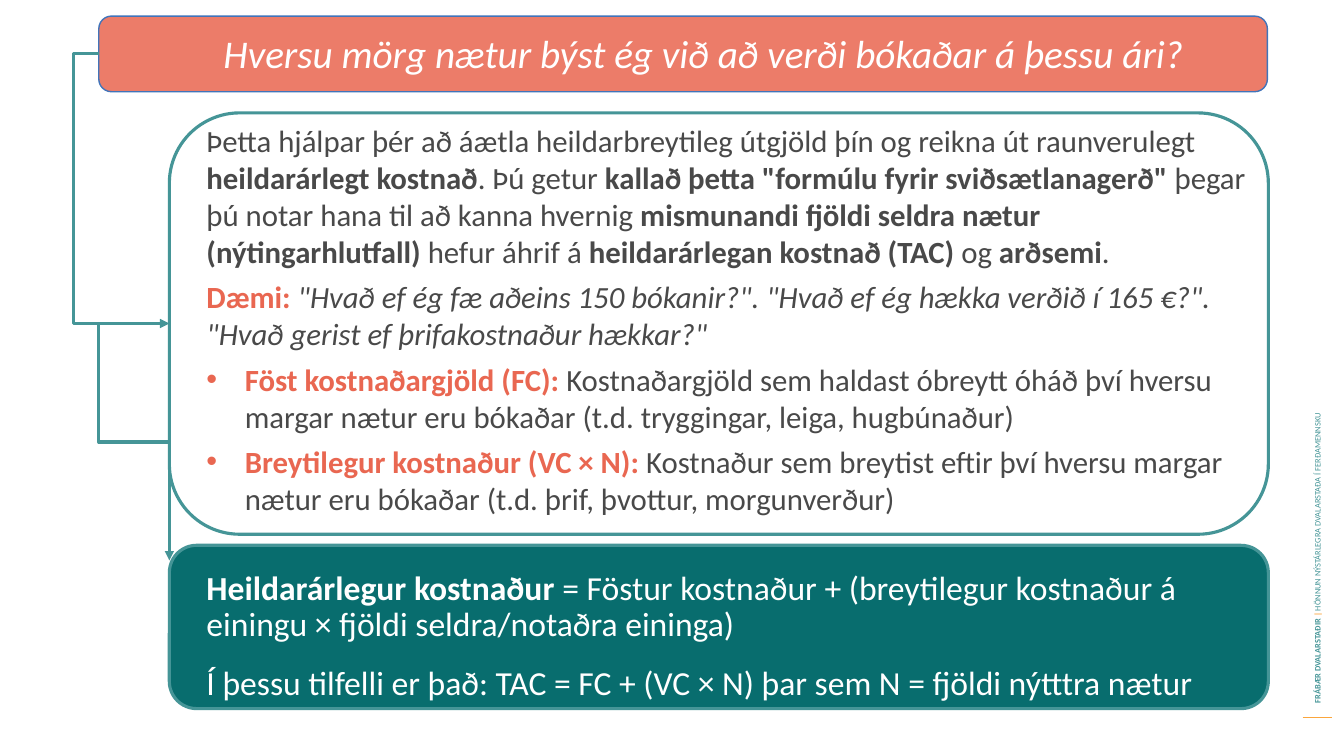
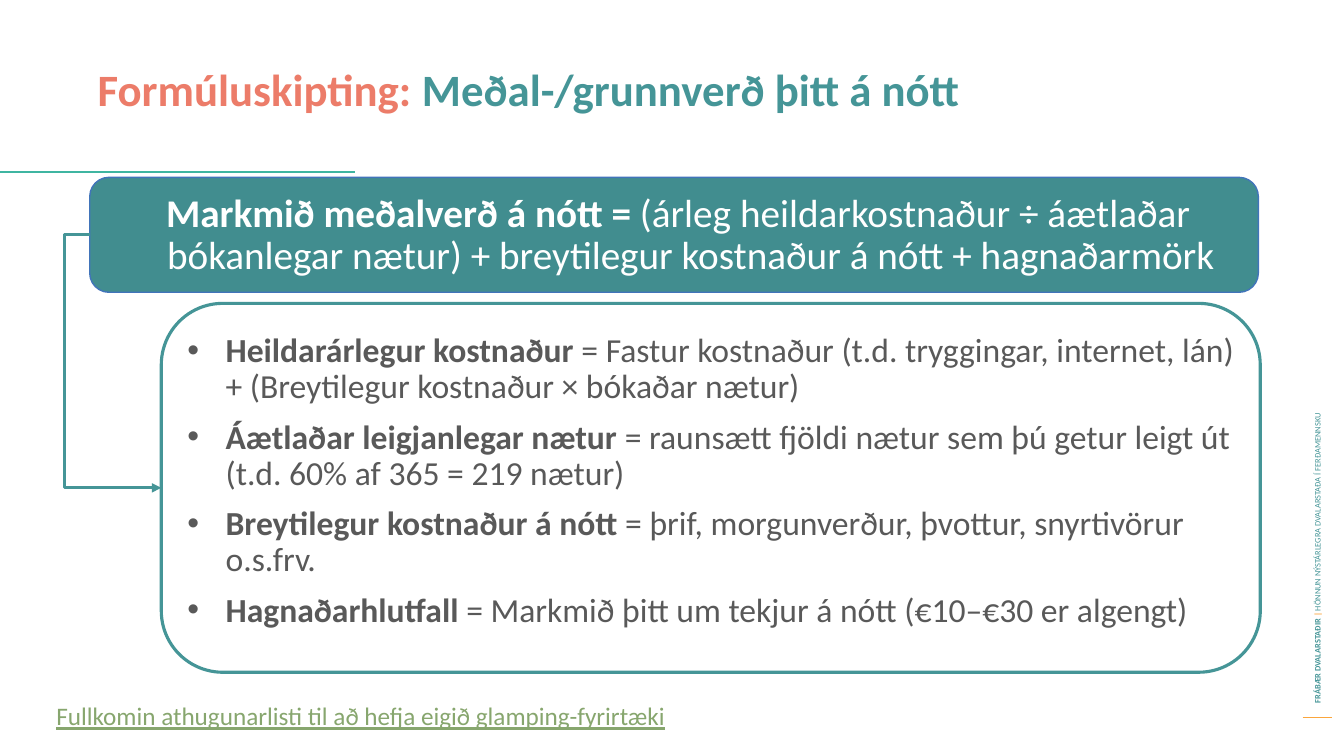
import pptx
import pptx.util
import pptx.dml.color
import pptx.enum.shapes
import pptx.enum.text
import pptx.oxml
import pptx.oxml.ns
import lxml.etree

Inches = pptx.util.Inches
Pt = pptx.util.Pt
FONT = "Calibri"
HUES = {
    "teal": "459597", "deep": "086D6E", "band": "418D8F", "mint": "3FB5A1",
    "coral": "EC7C69", "red": "E96751", "blue": "4174BA", "gold": "FBA63D",
    "amber": "FBA63B", "dark": "494949", "gray": "595959", "green": "87A66E",
    "white": "FFFFFF",
}
BODY = {"size": 22, "hue": "dark", "after": 6}
NOTE = {"size": 24, "lead": 0.9, "before": 10}
HEAD = {"size": 28, "hue": "white", "lead": 0.9, "center": True, "hang": 0.25}


def tint(name):
    return pptx.dml.color.RGBColor.from_string(HUES[name])


def add_sub(parent, tag, **attrs):
    node = lxml.etree.SubElement(parent, pptx.oxml.ns.qn(tag))
    for key, value in attrs.items():
        node.set(key, value)
    return node


# Text: each run is (words, style letters b/i/u, optional colour)
def add_para(para, runs, size, hue, lead=None, before=0, after=0,
             center=False, hang=0, bullet=False):
    props = para._p.get_or_add_pPr()
    if hang:
        props.set("marL", str(Inches(hang)))
        props.set("indent", str(-Inches(hang)))
    para.space_before, para.space_after = Pt(before), Pt(after)
    if lead:
        para.line_spacing = lead
    if center:
        para.alignment = pptx.enum.text.PP_ALIGN.CENTER
    if bullet:
        add_sub(props, "a:buFont", typeface="Arial")
        add_sub(props, "a:buChar", char="•")
    para.font.name, para.font.size = FONT, Pt(size)
    para.font.color.rgb = tint(hue)
    for words, style, *color in runs:
        run = para.add_run()
        run.text = words
        if "b" in style:
            run.font.bold = True
        if "i" in style:
            run.font.italic = True
        if "u" in style:
            run.font.underline = True
        if color:
            run.font.color.rgb = tint(color[0])


def add_text(slide, box, paras):
    shape = slide.shapes.add_textbox(*map(Inches, box))
    frame = shape.text_frame
    frame.word_wrap = True
    for i, (runs, style) in enumerate(paras):
        para = frame.add_paragraph() if i else frame.paragraphs[0]
        add_para(para, runs, **(style if i else {**style, "before": 0}))
    return shape


# Shapes and lines
def add_panel(slide, box, fill=None, line="teal", width=2.25):
    kind = pptx.enum.shapes.MSO_SHAPE.FLOWCHART_ALTERNATE_PROCESS
    shape = slide.shapes.add_shape(kind, *map(Inches, box))
    shape.shadow.inherit = False
    if fill:
        shape.fill.solid()
        shape.fill.fore_color.rgb = tint(fill)
    else:
        shape.fill.background()
    shape.line.color.rgb = tint(line)
    shape.line.width = Pt(width)
    return shape


def add_line(slide, ends, hue="teal", width=2.25, bend=None):
    kinds = pptx.enum.shapes.MSO_CONNECTOR
    kind = kinds.STRAIGHT if bend is None else kinds.ELBOW
    line = slide.shapes.add_connector(kind, *map(Inches, ends))
    line.line.color.rgb = tint(hue)
    line.line.width = Pt(width)
    if bend is not None:
        guides = line._element.spPr.prstGeom.get_or_add_avLst()
        add_sub(guides, "a:gd", name="adj1", fmla=f"val {round(bend * 100000)}")
        add_sub(line.line._get_or_add_ln(), "a:tailEnd", type="triangle")
    add_sub(line._element.spPr, "a:effectLst")
    return line


# Elbow that leaves the band's left side and enters the panel's left side
def link_left(slide, band, panel):
    line = add_line(slide, (0, 0, 1, 1), bend=-0.356)
    line.begin_connect(band, 1)
    line.end_connect(panel, 1)


# Elbow that goes down, across and down again: a turned connector
def link_down(slide, x1, y1, x2, y2):
    midx, midy = (x1 + x2) / 2, (y1 + y2) / 2
    long, short = (y2 - y1) / 2, (x2 - x1) / 2
    line = add_line(slide, (midx + long, midy - short, midx - long, midy + short),
                    bend=0.5)
    line._element.spPr.find(pptx.oxml.ns.qn("a:xfrm")).set("rot", "16200000")


# Side footer shared by the slides
def add_foot(slide):
    add_line(slide, (12.92, 7.12, 13.21, 7.12), "gold", 0.75)
    foot = add_text(slide, (10.18, 4.09, 5.77, 0.2), [([
        ("FRÁBÆR DVALARSTAÐIR ", "b"), ("| ", "b", "amber"),
        ("HÖNNUN NÝSTÁRLEGRA DVALARSTAÐA Í FERÐAMENNSKU", "")],
        {"size": 6, "hue": "teal"})])
    foot.rotation = 270
    foot.text_frame.vertical_anchor = pptx.enum.text.MSO_ANCHOR.MIDDLE


def add_slide(deck):
    slide = deck.slides.add_slide(deck.slide_layouts[6])
    add_foot(slide)
    return slide


# Coloured band with its heading, the text set off from the band's corner
def add_band(slide, box, fill, shift, runs, after):
    band = add_panel(slide, box, fill, "blue", 1)
    left, top = box[0] + shift[0], box[1] + shift[1]
    add_text(slide, (left, top, 11.61, 0.88), [(runs, {**HEAD, "after": after})])
    return band


# Panel drawn around its text
def add_card(slide, box, shift, paras, fill=None):
    left, top, wide, high = box
    panel = add_panel(slide, box, fill)
    add_text(slide, (left + shift[0], top + shift[1], 10.63, 0.88), paras)
    return panel


def make_costs(deck):
    slide = add_slide(deck)
    item = {**BODY, "hang": 0.38, "bullet": True}
    note = {**NOTE, "hue": "white", "after": 6}
    # Total cost
    add_card(slide, (1.68, 5.41, 10.9, 1.62), (0.27, 0.21), [
        ([("Heildarárlegur kostnaður ", "b"),
          ("= Föstur kostnaður + (breytilegur kostnaður á einingu × "
           "fjöldi seldra/notaðra eininga)", "")], note),
        ([("Í þessu tilfelli er það: TAC = FC + (VC × N) þar sem "
           "N = fjöldi nýtttra nætur", "")], note),
    ], "deep")
    # Question
    band = add_band(slide, (0.98, 0.16, 11.59, 0.75), "coral", (0.19, 0.13), [
        ("Hversu mörg nætur býst ég við að verði bókaðar á þessu ári?", "i")], 6)
    # Answer
    panel = add_card(slide, (1.68, 1.12, 10.9, 4.18), (0.27, 0.04), [
        ([("Þetta hjálpar þér að áætla heildarbreytileg útgjöld þín og "
           "reikna út raunverulegt ", ""),
          ("heildarárlegt kostnað", "b"), (". Þú getur ", ""),
          ('kallað þetta "formúlu fyrir sviðsætlanagerð" ', "b"),
          ("þegar þú notar hana til að kanna hvernig ", ""),
          ("mismunandi fjöldi seldra nætur (nýtingarhlutfall) ", "b"),
          ("hefur áhrif á ", ""), ("heildarárlegan kostnað (TAC) ", "b"),
          ("og ", ""), ("arðsemi", "b"), (".", "")], BODY),
        ([("Dæmi: ", "b", "red"),
          ('"Hvað ef ég fæ aðeins 150 bókanir?". "Hvað ef ég hækka verðið '
           'í 165 €?". "Hvað gerist ef þrifakostnaður hækkar?"', "i")], BODY),
        ([("Föst kostnaðargjöld (FC): ", "b", "red"),
          ("Kostnaðargjöld sem haldast óbreytt óháð því hversu margar nætur "
           "eru bókaðar (t.d. tryggingar, leiga, hugbúnaður)", "")], item),
        ([("Breytilegur kostnaður (VC × N): ", "b", "red"),
          ("Kostnaður sem breytist eftir því hversu margar nætur eru bókaðar "
           "(t.d. þrif, þvottur, morgunverður)", "")], item),
    ])
    link_left(slide, band, panel)
    link_down(slide, 0.98, 3.21, 1.68, 5.56)


def make_price(deck):
    slide = add_slide(deck)
    item = {**NOTE, "hue": "gray", "hang": 0.38, "bullet": True}
    # Title and rule
    add_text(slide, (0.87, 0.62, 11.61, 0.88), [([
        ("Formúluskipting: ", "b", "coral"),
        ("Meðal-/grunnverð þitt á nótt", "b")],
        {"size": 32, "hue": "teal", "lead": 0.9})])
    add_line(slide, (0, 1.71, 3.52, 1.71), "mint", 1.5)
    # Formula
    band = add_band(slide, (0.89, 1.76, 11.59, 1.14), "band", (0.03, 0.11), [
        ("Markmið meðalverð á nótt = ", "b"),
        ("(árleg heildarkostnaður ÷ áætlaðar bókanlegar nætur) + "
         "breytilegur kostnaður á nótt + hagnaðarmörk", "")], 12)
    # Terms
    terms = [
        ("Heildarárlegur kostnaður ",
         "= Fastur kostnaður (t.d. tryggingar, internet, lán) + "
         "(Breytilegur kostnaður × bókaðar nætur)"),
        ("Áætlaðar leigjanlegar nætur ",
         "= raunsætt fjöldi nætur sem þú getur leigt út "
         "(t.d. 60% af 365 = 219 nætur)"),
        ("Breytilegur kostnaður á nótt ",
         "= þrif, morgunverður, þvottur, snyrtivörur o.s.frv."),
        ("Hagnaðarhlutfall ",
         "= Markmið þitt um tekjur á nótt (€10–€30 er algengt)"),
    ]
    panel = add_card(slide, (1.6, 3.01, 10.9, 3.66), (0.16, 0.25), [
        ([(term, "b"), (sense, "")], item) for term, sense in terms])
    link_left(slide, band, panel)
    # Further reading
    add_text(slide, (0.46, 6.9, 9.38, 0.4), [([
        ("Fullkomin athugunarlisti til að hefja eigið glamping-fyrirtæki", "u")],
        {"size": 18, "hue": "green"})])


def main():
    deck = pptx.Presentation()
    deck.slide_width, deck.slide_height = Inches(13.33), Inches(7.5)
    make_costs(deck)
    make_price(deck)
    deck.save("out.pptx")


if __name__ == "__main__":
    main()
